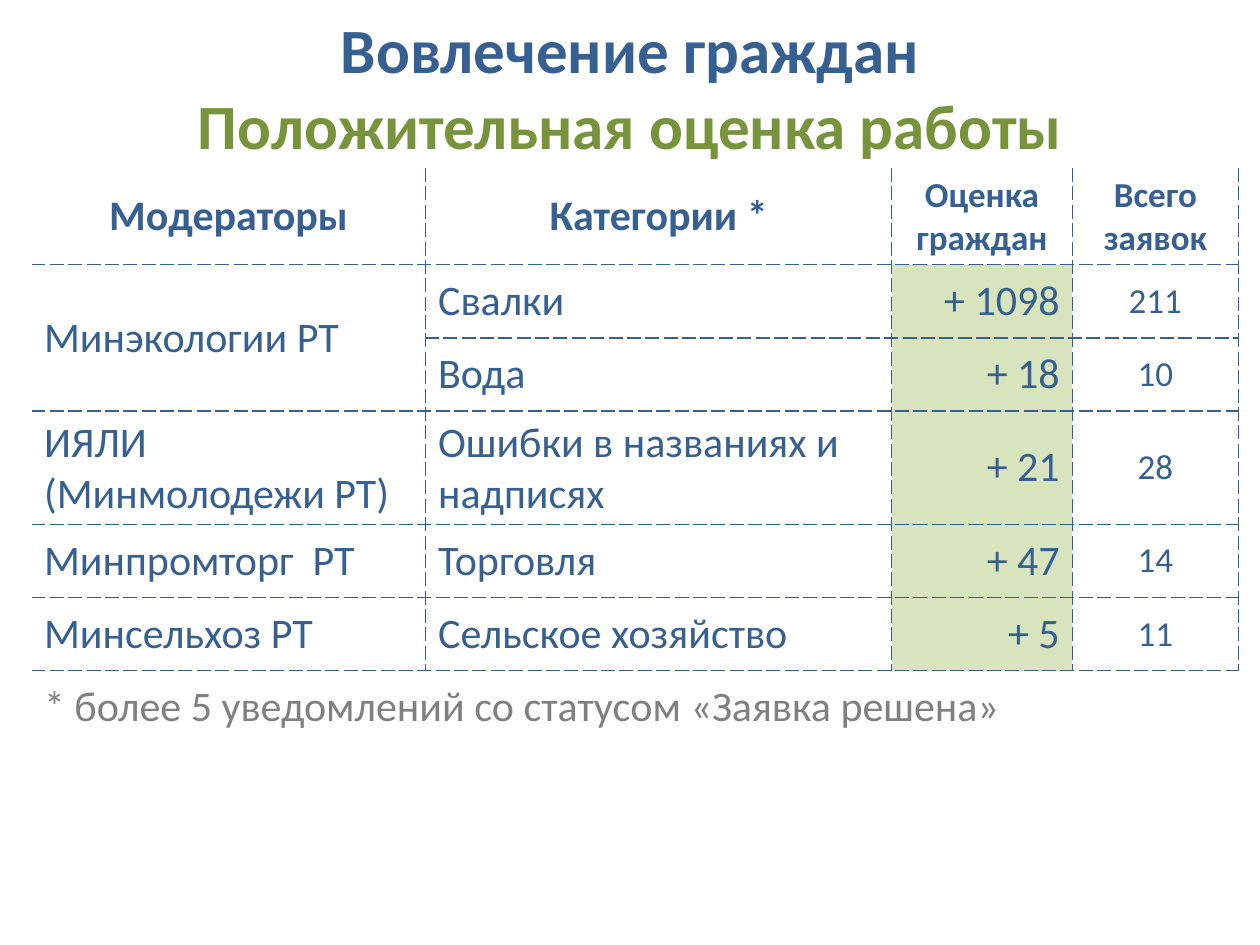
from lxml import etree
from pptx import Presentation
from pptx import util as u
from pptx.dml.color import RGBColor
from pptx.enum import text
from pptx.oxml.ns import qn

BLUE = RGBColor(0x37, 0x60, 0x92)
GREEN = RGBColor(0x77, 0x93, 0x3C)
PALE_GREEN = RGBColor(0xD7, 0xE4, 0xBD)
GREY = RGBColor(0x80, 0x80, 0x80)
FONT = "Calibri"

LEFT, CENTER, RIGHT = text.PP_ALIGN.LEFT, text.PP_ALIGN.CENTER, text.PP_ALIGN.RIGHT
COL_WIDTHS = [225.2, 266.4, 103.2, 95]
ROW_HEIGHT = 41.8
HEADERS = ["Модераторы", "Категории *", "Оценка граждан", "Всего заявок"]
ROWS = [
    ["Минэкологии РТ", "Свалки", "+ 1098", "211"],
    ["", "Вода", "+ 18", "10"],
    ["ИЯЛИ\n(Минмолодежи РТ)", "Ошибки в названиях и надписях", "+ 21", "28"],
    ["Минпромторг  РТ", "Торговля", "+ 47", "14"],
    ["Минсельхоз РТ", "Сельское хозяйство", "+ 5", "11"],
]
FOOTNOTE = "* более 5 уведомлений со статусом «Заявка решена»"
HEADER_SIZES = [24, 24, 20, 20]
BODY_SIZES = [24, 24, 24, 20]
BODY_ALIGNS = [LEFT, LEFT, RIGHT, CENTER]
RATING_COL = 2


def style_font(font, size, color, bold):
    font.name = FONT
    font.size = u.Pt(size)
    font.bold = bold
    font.color.rgb = color


def set_borders(cell, sides):
    tc_pr = cell._tc.get_or_add_tcPr()
    for side in "LRTB":
        ln = etree.SubElement(tc_pr, qn(f"a:ln{side}"), w=str(u.Pt(1)))
        if side in sides:
            fill = etree.SubElement(ln, qn("a:solidFill"))
            etree.SubElement(fill, qn("a:srgbClr"), val=str(BLUE))
            etree.SubElement(ln, qn("a:prstDash"), val="sysDash")
        else:
            etree.SubElement(ln, qn("a:noFill"))


def border_sides(row, col, last_row):
    if row == last_row:
        return "T"
    return ("L" if col else "") + "R" + ("T" if row else "") + "B"


def set_cell(cell, value, size, align, color=BLUE, bold=False):
    cell.vertical_anchor = text.MSO_ANCHOR.MIDDLE
    cell.text_frame.text = value
    for p in cell.text_frame.paragraphs:
        p.alignment = align
        for r in p.runs:
            style_font(r.font, size, color, bold)


def add_title(s):
    sp = s.shapes.title
    sp.left, sp.top, sp.width, sp.height = u.Pt(0), u.Pt(2), u.Pt(720), u.Pt(94.3)
    tf = sp.text_frame
    tf.text = "Вовлечение граждан\vПоложительная оценка работы"
    tf.auto_size = text.MSO_AUTO_SIZE.SHAPE_TO_FIT_TEXT
    p = tf.paragraphs[0]
    p.alignment = CENTER
    for r, color in zip(p.runs, [BLUE, GREEN]):
        style_font(r.font, 36, color, True)


def add_ratings_table(s):
    last_row = len(ROWS) + 1
    table = s.shapes.add_table(
        last_row + 1, len(COL_WIDTHS), u.Pt(18), u.Pt(96),
        u.Pt(sum(COL_WIDTHS)), u.Pt(ROW_HEIGHT * (last_row + 1))).table
    table.first_row = table.horz_banding = False
    for column, width in zip(table.columns, COL_WIDTHS):
        column.width = u.Pt(width)
    for i, row in enumerate(table.rows):
        row.height = u.Pt(ROW_HEIGHT)
        for j, cell in enumerate(row.cells):
            set_borders(cell, border_sides(i, j, last_row))
            if j == RATING_COL and 0 < i < last_row:
                cell.fill.solid()
                cell.fill.fore_color.rgb = PALE_GREEN
            else:
                cell.fill.background()
    for j, (value, size) in enumerate(zip(HEADERS, HEADER_SIZES)):
        set_cell(table.cell(0, j), value, size, CENTER, bold=True)
    for i, values in enumerate(ROWS, 1):
        for j, value in enumerate(values):
            set_cell(table.cell(i, j), value, BODY_SIZES[j], BODY_ALIGNS[j])
    table.cell(1, 0).merge(table.cell(2, 0))
    table.cell(last_row, 0).merge(table.cell(last_row, len(COL_WIDTHS) - 1))
    set_cell(table.cell(last_row, 0), FOOTNOTE, 24, LEFT, GREY)


def main():
    prs = Presentation()
    prs.slide_width, prs.slide_height = u.Pt(720), u.Pt(540)
    s = prs.slides.add_slide(prs.slide_layouts[5])
    add_title(s)
    add_ratings_table(s)
    prs.save("out.pptx")


if __name__ == "__main__":
    main()
